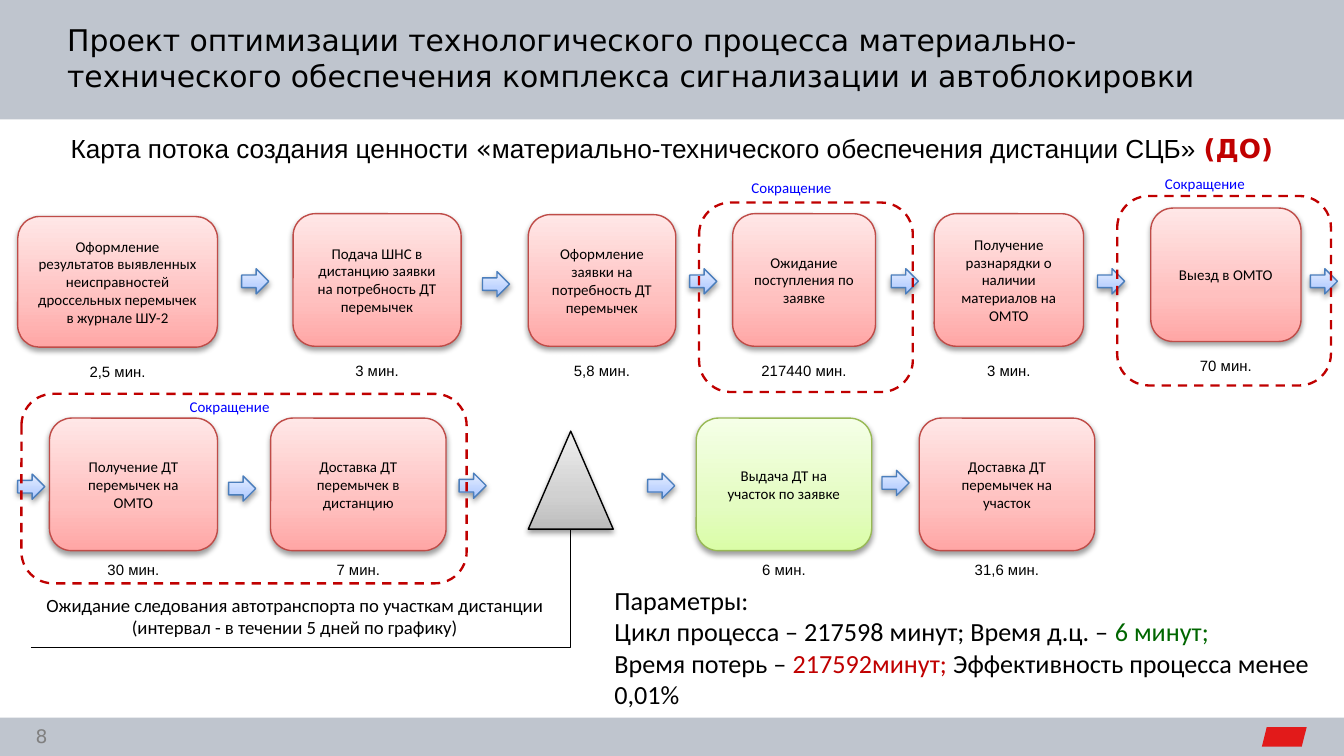
"""Build the value stream map slide for the supply process before optimization."""
import copy

import lxml.etree
import pptx
import pptx.dml.color
import pptx.enum.dml
import pptx.enum.shapes
import pptx.enum.text
import pptx.oxml.ns
import pptx.util

Pt = pptx.util.Pt
qn = pptx.oxml.ns.qn
rgb = pptx.dml.color.RGBColor.from_string
KIND = pptx.enum.shapes.MSO_SHAPE
ALIGN = pptx.enum.text.PP_ALIGN
ANCHOR = pptx.enum.text.MSO_ANCHOR


class Theme:
    band, black, gray = "BFC5CE", "000000", "808080"
    red, green, blue, mark = "C00000", "006600", "0000FF", "E21A1A"
    rose = ("FFA6A5", "FFC0BF", "FFE7E7"), "BF4C48"
    lime = ("DAFDA7", "E4FCC2", "F5FFE7"), "98B955"
    sky = ("A4C4FF", "BFD4FF", "E6EEFF"), "4B7EBC"
    ash = ("BDBDBD", "D1D1D1", "EEEEEE"), "000000"
    head, lead, note, small = Pt(16), Pt(14), Pt(10), Pt(8)
    sans, body, wide = "Arial", "Calibri", "DejaVu Sans"


def write(shape, rows, size, font, align=ALIGN.LEFT, anchor=ANCHOR.TOP):
    frame = shape.text_frame
    frame.word_wrap = True
    frame.auto_size = pptx.enum.text.MSO_AUTO_SIZE.NONE
    frame.vertical_anchor = anchor
    for i, row in enumerate(rows):
        para = frame.add_paragraph() if i else frame.paragraphs[0]
        para.alignment = align
        for text, color, *face in row:
            run = para.add_run()
            run.text = text
            run.font.size = size
            run.font.name = face[0] if face else font
            run.font.bold = len(face) > 1
            run.font.color.rgb = rgb(color)


def glow(kind, box, style):
    shape = shapes.add_shape(kind, *map(Pt, box))
    stops, edge = style
    shape.fill.gradient()
    shape.fill.gradient_angle = 90
    first = shape.element.spPr.find(".//" + qn("a:gs"))
    first.addnext(copy.deepcopy(first))
    for stop, color, place in zip(shape.fill.gradient_stops, stops, (0, 0.35, 1)):
        stop.color.rgb = rgb(color)
        stop.position = place
    shape.line.color.rgb = rgb(edge)
    shape.line.width = Pt(0.75)
    shape.shadow.inherit = False
    effect = shape.element.spPr.find(qn("a:effectLst"))
    shade = lxml.etree.SubElement(effect, qn("a:outerShdw"), blurRad=str(Pt(3.1)),
                                  dist=str(Pt(1.6)), dir="5400000", rotWithShape="0")
    tone = lxml.etree.SubElement(shade, qn("a:srgbClr"), val=Theme.black)
    lxml.etree.SubElement(tone, qn("a:alpha"), val="38000")
    return shape


deck = pptx.Presentation()
deck.slide_width, deck.slide_height = Pt(720), Pt(405)
slide = deck.slides.add_slide(deck.slide_layouts[5])
shapes = slide.shapes

title = shapes.title
for kind, box, color in [
    (KIND.RECTANGLE, (0, 0, 720, 64), Theme.band),
    (KIND.RECTANGLE, (0, 384.5, 720, 20.5), Theme.band),
    (KIND.PARALLELOGRAM, (676, 389.5, 24, 10.5), Theme.mark),
]:
    band = shapes.add_shape(kind, *map(Pt, box))
    band.fill.solid()
    band.fill.fore_color.rgb = rgb(color)
    band.line.fill.background()
    band.shadow.inherit = False
    title.element.addprevious(band.element)

title.left, title.top, title.width, title.height = Pt(0), Pt(0.5), Pt(720), Pt(60.5)
title.text_frame.text = ("Проект оптимизации технологического процесса материально-\v"
                         "технического обеспечения комплекса сигнализации и автоблокировки")
write(title, [[]], Theme.head, Theme.wide, anchor=ANCHOR.MIDDLE)
title.text_frame.margin_left = Pt(36)
for run in title.text_frame.paragraphs[0].runs:
    run.font.size, run.font.name = Theme.head, Theme.wide
    run.font.color.rgb = rgb(Theme.black)

page = shapes.add_textbox(Pt(12), Pt(384.5), Pt(35.5), Pt(20))
write(page, [[("8", Theme.gray)]], Theme.note, Theme.wide, anchor=ANCHOR.MIDDLE)
lead = shapes.add_textbox(Pt(0), Pt(67.5), Pt(720), Pt(41))
write(lead, [[("Карта потока создания ценности ", Theme.black),
              ("«", Theme.black, Theme.wide),
              ("материально-технического обеспечения дистанции СЦБ» ", Theme.black),
              ("(ДО)", Theme.red, Theme.wide, "bold")]],
      Theme.lead, Theme.sans, ALIGN.CENTER)

steps = [
    (9.5, 116, 107, 70, "2,5 мин.",
     "Оформление результатов выявленных неисправностей дроссельных перемычек в журнале ШУ-2"),
    (157, 114.5, 90, 71, "3 мин.", "Подача ШНС в дистанцию заявки на потребность ДТ перемычек"),
    (283, 115, 79, 70.5, "5,8 мин.", "Оформление заявки на потребность ДТ перемычек"),
    (392.5, 114.5, 76.5, 71, "217440 мин.", "Ожидание поступления по заявке"),
    (500.5, 114.5, 80, 71, "3 мин.", "Получение разнарядки о наличии материалов на ОМТО"),
    (616.5, 111.5, 80.5, 71.5, "70 мин.", "Выезд в ОМТО"),
    (26.5, 224, 90, 71, "30 мин.", "Получение ДТ перемычек на ОМТО"),
    (145, 224, 94, 71, "7 мин.", "Доставка ДТ перемычек в дистанцию"),
    (373, 224, 94, 71, "6 мин.", "Выдача ДТ на участок по заявке"),
    (492.5, 224, 94, 71, "31,6 мин.", "Доставка ДТ перемычек на участок"),
]
for x, y, w, h, time, text in steps:
    style = Theme.lime if text.startswith("Выдача") else Theme.rose
    step = glow(KIND.ROUNDED_RECTANGLE, (x, y, w, h), style)
    write(step, [[(text, Theme.black)]], Theme.small, Theme.body, ALIGN.CENTER, ANCHOR.MIDDLE)
    gap = 8 if y < 200 else 5.5
    label = shapes.add_textbox(Pt(x), Pt(y + h + gap), Pt(w), Pt(9.5))
    frame = label.text_frame
    frame.margin_left = frame.margin_right = frame.margin_top = frame.margin_bottom = 0
    write(label, [[(time, Theme.black)]], Theme.small, Theme.sans, ALIGN.CENTER)

for x, y in [(129.5, 144), (258.5, 145.5), (369.5, 144), (477.5, 144), (588, 144), (702, 144),
             (9.5, 254), (122.5, 255), (246, 253.5), (347, 253.5), (472.5, 252)]:
    glow(KIND.RIGHT_ARROW, (x, y, 14.5, 13.5), Theme.sky)

glow(KIND.ISOSCELES_TRIANGLE, (283, 231, 45.5, 52.5), Theme.ash)
link = shapes.add_connector(pptx.enum.shapes.MSO_CONNECTOR.ELBOW,
                            Pt(16.5), Pt(347), Pt(305.5), Pt(283.5))
link.element.spPr.find(qn("a:prstGeom")).set("prst", "bentConnector2")
link.line.color.rgb = rgb(Theme.black)
link.line.width = Pt(0.75)
lxml.etree.SubElement(link.element.spPr, qn("a:effectLst"))

wait = shapes.add_textbox(Pt(10), Pt(314.5), Pt(295.5), Pt(31.5))
write(wait, [[("Ожидание следования автотранспорта по участкам дистанции "
               "(интервал - в течении 5 дней по графику)", Theme.black)]],
      Theme.note, Theme.body, ALIGN.CENTER)

facts = shapes.add_textbox(Pt(315.5), Pt(309.5), Pt(404.5), Pt(75))
facts.text_frame.margin_left = Pt(13.7)
write(facts, [
    [("Параметры:", Theme.black)],
    [("Цикл процесса – 217598 минут; Время д.ц. – ", Theme.black), ("6 минут;", Theme.green)],
    [("Время потерь – ", Theme.black), ("217592минут; ", Theme.red),
     ("Эффективность процесса менее 0,01%", Theme.black)],
], Theme.lead, Theme.body)

for x, y, w, left, top in [(374.5, 108.5, 114.5, 395.5, 92), (598.5, 105, 114.5, 617, 90),
                           (11.5, 211, 238.5, 94.5, 209.5)]:
    zone = shapes.add_shape(KIND.ROUNDED_RECTANGLE, Pt(x), Pt(y), Pt(w), Pt(101.5))
    zone.fill.background()
    zone.line.color.rgb = rgb(Theme.red)
    zone.line.width = Pt(1.25)
    zone.line.dash_style = pptx.enum.dml.MSO_LINE.DASH
    zone.shadow.inherit = False
    tag = shapes.add_textbox(Pt(left), Pt(top), Pt(72), Pt(17))
    write(tag, [[("Сокращение", Theme.blue)]], Theme.small, Theme.body)

deck.save("out.pptx")
